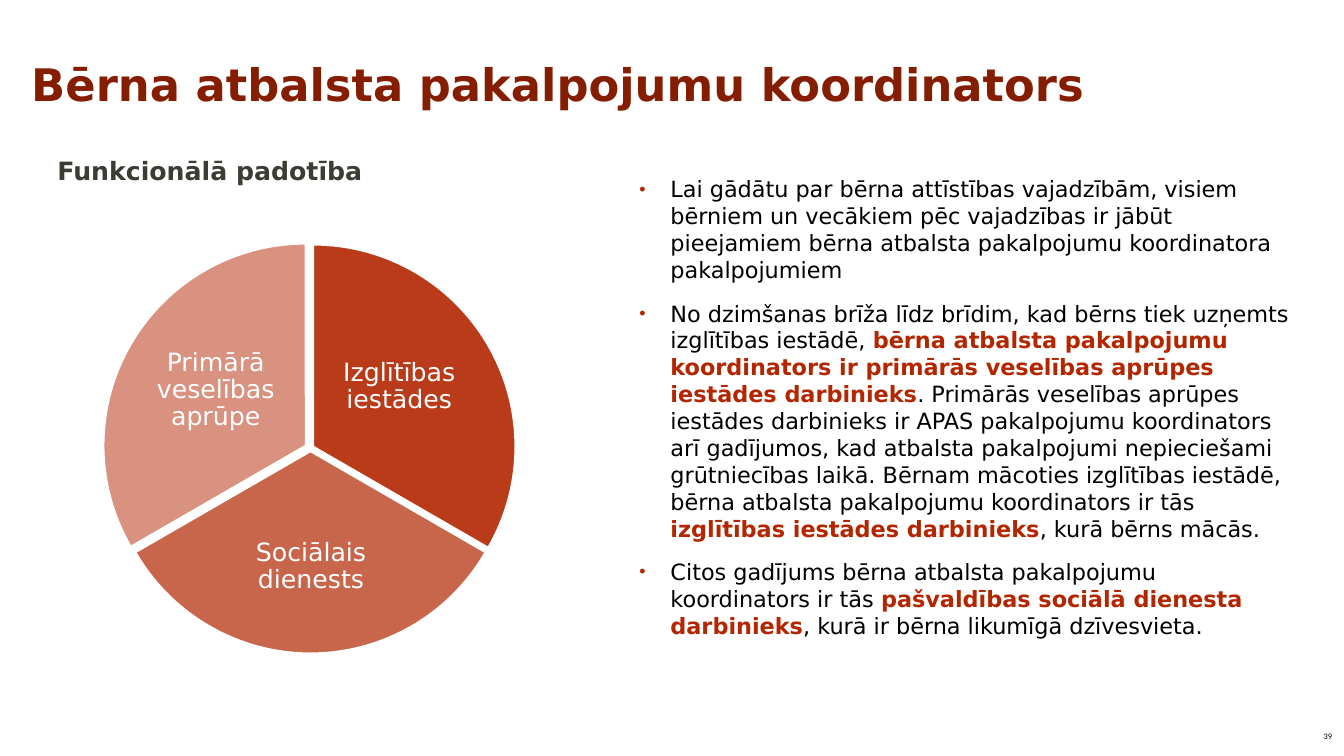
from lxml import etree
from pptx import Presentation
from pptx import util as u
from pptx.dml.color import RGBColor
from pptx.enum import shapes, text
from pptx.oxml import ns

FONT = "DejaVu Sans"
RUST, MAROON, CHARCOAL, BLACK, WHITE = "B22600", "851D00", "3C3C34", "000000", "FFFFFF"

SECTORS = [
    ("Izglītības iestādes", 162, 18, 90, (0.08, 0.01), (2.25, 0.75, 1.36, 1.33)),
    ("Sociālais dienests", 18, 90, 70, (0.05, 0.06), (1.15, 2.58, 1.81, 1.24)),
    ("Primārā veselības aprūpe", 90, 162, 50, (0, 0), (0.43, 0.79, 1.36, 1.33)),
]

DUTIES = [
    ["Lai gādātu par bērna attīstības vajadzībām, visiem bērniem un vecākiem pēc vajadzības "
     "ir jābūt pieejamiem bērna atbalsta pakalpojumu koordinatora pakalpojumiem"],
    ["No dzimšanas brīža līdz brīdim, kad bērns tiek uzņemts izglītības iestādē, ",
     "bērna atbalsta pakalpojumu koordinators ir primārās veselības aprūpes iestādes darbinieks",
     ". Primārās veselības aprūpes iestādes darbinieks ir APAS pakalpojumu koordinators arī "
     "gadījumos, kad atbalsta pakalpojumi nepieciešami grūtniecības laikā. Bērnam mācoties "
     "izglītības iestādē, bērna atbalsta pakalpojumu koordinators ir tās ",
     "izglītības iestādes darbinieks",
     ", kurā bērns mācās."],
    ["Citos gadījums bērna atbalsta pakalpojumu koordinators ir tās ",
     "pašvaldības sociālā dienesta darbinieks",
     ", kurā ir bērna likumīgā dzīvesvieta."],
]


def color(hex_value):
    return RGBColor.from_string(hex_value)


def style(run, size, hex_value, bold=False, name=FONT):
    run.font.size = u.Pt(size)
    run.font.name = name
    run.font.bold = bold
    run.font.color.rgb = color(hex_value)


def place(item, box):
    item.left, item.top, item.width, item.height = (u.Inches(v) for v in box)


def add_label(slide, box, wording, size, hex_value, bold=False, name=FONT):
    label = slide.shapes.add_textbox(*(u.Inches(v) for v in box))
    label.text_frame.word_wrap = True
    label.text_frame.text = wording
    style(label.text_frame.paragraphs[0].runs[0], size, hex_value, bold, name)
    return label.text_frame


def add_heading(slide, box):
    heading = slide.shapes.title
    place(heading, box)
    frame = heading.text_frame
    frame.text = "Bērna atbalsta pakalpojumu koordinators"
    frame.vertical_anchor = text.MSO_ANCHOR.TOP
    line = frame.paragraphs[0]
    line.alignment = text.PP_ALIGN.LEFT
    line.line_spacing = 0.9
    style(line.runs[0], 32, MAROON, True)


def add_subheading(slide, box):
    frame = add_label(slide, box, "Funkcionālā padotība", 18, CHARCOAL, True)
    frame.word_wrap = False


def add_sectors(slide, box):
    left, top, diameter = box
    for wording, start, end, opacity, shift, area in SECTORS:
        sector = slide.shapes.add_shape(
            shapes.MSO_SHAPE.PIE, u.Inches(left + shift[0]), u.Inches(top + shift[1]),
            u.Inches(diameter), u.Inches(diameter))
        sector.adjustments[0] = start
        sector.adjustments[1] = end
        sector.shadow.inherit = False
        sector.fill.solid()
        sector.fill.fore_color.rgb = color(RUST)
        tint = sector._element.spPr.find(".//" + ns.qn("a:srgbClr"))
        etree.SubElement(tint, ns.qn("a:alpha"), val=str(opacity * 1000))
        sector.line.color.rgb = color(WHITE)
        sector.line.width = u.Pt(1)

        x, y, width, height = area
        frame = add_label(slide, (left + x, top + y, width, height), wording, 18, WHITE)
        frame.margin_left = frame.margin_right = u.Inches(0.03)
        frame.margin_top = frame.margin_bottom = u.Inches(0.03)
        frame.vertical_anchor = text.MSO_ANCHOR.MIDDLE
        frame.paragraphs[0].alignment = text.PP_ALIGN.CENTER
        frame.paragraphs[0].line_spacing = 0.9


def add_bullet(paragraph):
    props = paragraph._p.get_or_add_pPr()
    props.set("marL", str(u.Inches(0.31)))
    props.set("indent", str(-u.Inches(0.31)))
    tint = etree.SubElement(props, ns.qn("a:buClr"))
    etree.SubElement(tint, ns.qn("a:srgbClr"), val=RUST)
    etree.SubElement(props, ns.qn("a:buSzPct"), val="80000")
    etree.SubElement(props, ns.qn("a:buFont"), typeface="Arial")
    etree.SubElement(props, ns.qn("a:buChar"), char="•")


def add_duties(slide, box):
    duties = slide.placeholders[1]
    place(duties, box)
    frame = duties.text_frame
    frame.auto_size = text.MSO_AUTO_SIZE.SHAPE_TO_FIT_TEXT
    for number, parts in enumerate(DUTIES):
        duty = frame.add_paragraph() if number else frame.paragraphs[0]
        duty.space_before = duty.space_after = u.Pt(6)
        add_bullet(duty)
        for position, wording in enumerate(parts):
            run = duty.add_run()
            run.text = wording
            stressed = position % 2 == 1
            style(run, 16, RUST if stressed else BLACK, stressed)


def add_page_number(slide, box):
    frame = add_label(slide, box, "39", 6, BLACK, name="Calibri")
    frame.vertical_anchor = text.MSO_ANCHOR.MIDDLE
    frame.paragraphs[0].alignment = text.PP_ALIGN.CENTER


def main():
    deck = Presentation()
    deck.slide_width = u.Inches(13.33)
    deck.slide_height = u.Inches(7.5)
    slide = deck.slides.add_slide(deck.slide_layouts[1])
    add_heading(slide, (0.21, 0.57, 11.5, 1.45))
    add_sectors(slide, (1.03, 2.42, 4))
    add_page_number(slide, (13.01, 7.1, 0.32, 0.4))
    add_duties(slide, (6.24, 1.69, 6.67, 5.02))
    add_subheading(slide, (0.47, 1.49, 3.32, 0.4))
    deck.save("out.pptx")


if __name__ == "__main__":
    main()
